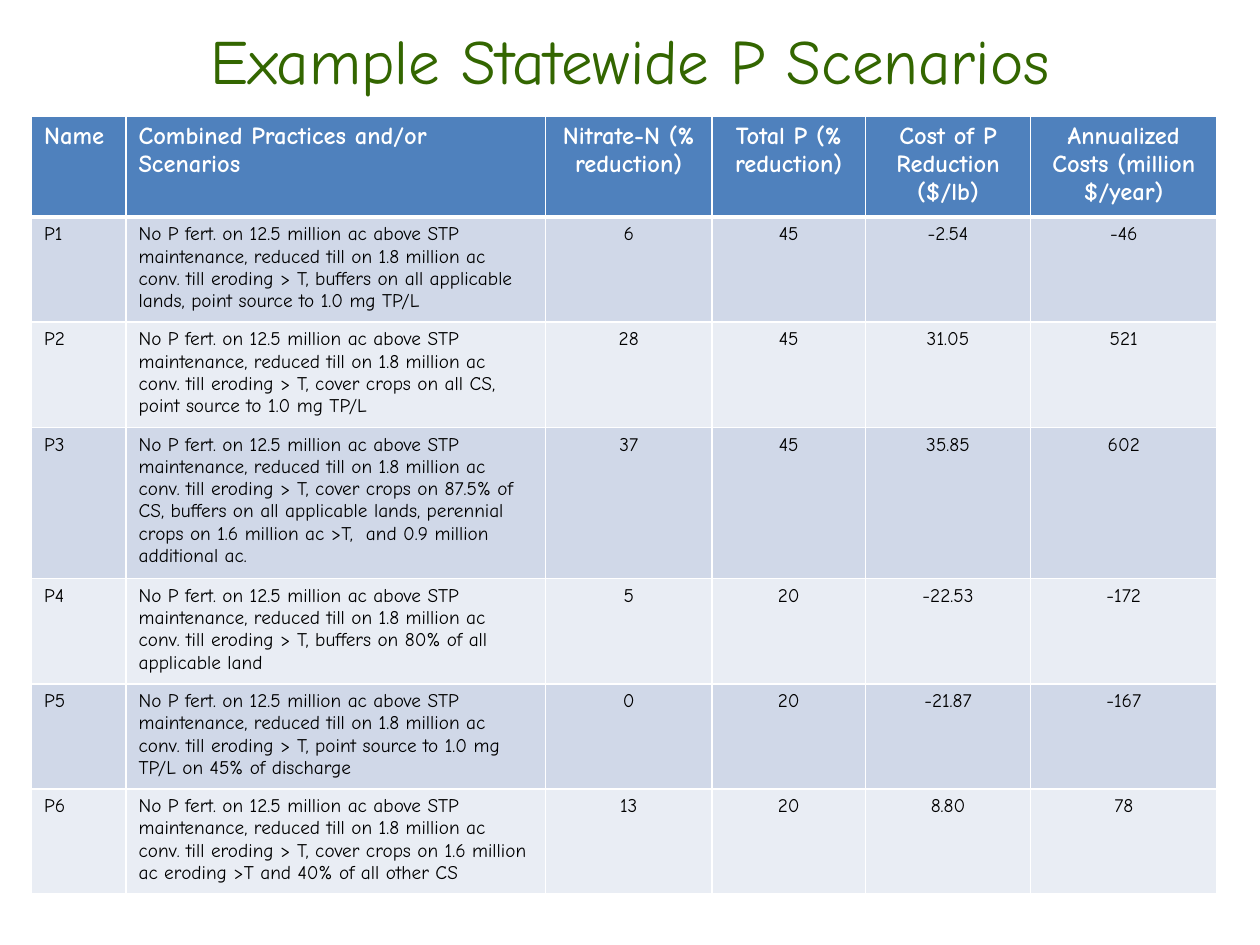
from dataclasses import dataclass

from pptx import Presentation
from pptx.dml.color import RGBColor
from pptx.enum.text import MSO_ANCHOR, PP_ALIGN
from pptx.oxml import parse_xml
from pptx.oxml.ns import nsdecls
from pptx.util import Inches, Pt


@dataclass(frozen=True)
class Theme:
    font: str = "Comic Neue"
    title: str = "336600"
    header: str = "4F81BD"
    bands: tuple = ("D0D8E8", "E9EDF4")
    light: str = "FFFFFF"
    body: str = "000000"
    title_size: int = 36
    header_size: int = 14
    body_size: int = 11
    rule: int = 1
    header_rule: int = 3


THEME = Theme()
WIDTH, HEIGHT = Inches(10), Inches(7.5)

# Boxes, columns and rows as shares of the slide's size
TITLE_BOX = (0.05, 0.01, 0.9, 0.105)
TABLE_BOX = (0.025, 0.123, 0.941, 0.87)
COLUMNS = (0.075, 0.333, 0.132, 0.122, 0.131, 0.148)
MIN_ROW = 0.055  # rows grow with their text
LEFT_COLUMNS = 2

HEADINGS = (
    "Name", "Combined Practices and/or Scenarios", "Nitrate-N (% reduction)",
    "Total P (% reduction)", "Cost of P Reduction ($/lb)",
    "Annualized Costs (million $/year)",
)
SHARED_PRACTICES = (
    "No P fert. on 12.5 million ac above STP maintenance, "
    "reduced till on 1.8 million ac conv. till eroding > T, "
)
# Practices added to the shared ones, then the four figures
SCENARIOS = (
    ("buffers on all applicable lands, point source to 1.0 mg TP/L",
     "6", "45", "-2.54", "-46"),
    ("cover crops on all CS, point source to 1.0 mg TP/L",
     "28", "45", "31.05", "521"),
    ("cover crops on 87.5% of CS, buffers on all applicable lands, "
     "perennial crops on 1.6 million ac >T,  and 0.9 million additional ac.",
     "37", "45", "35.85", "602"),
    ("buffers on 80% of all applicable land",
     "5", "20", "-22.53", "-172"),
    ("point source to 1.0 mg TP/L on 45% of discharge",
     "0", "20", "-21.87", "-167"),
    ("cover crops on 1.6 million ac eroding >T and 40% of all other CS",
     "13", "20", "8.80", "78"),
)


def place(box):
    left, top, width, height = box
    return (int(left * WIDTH), int(top * HEIGHT),
            int(width * WIDTH), int(height * HEIGHT))


def write(frame, text, *, size, color, bold=False, align=PP_ALIGN.LEFT):
    frame.word_wrap = True
    paragraph = frame.paragraphs[0]
    paragraph.alignment = align
    run = paragraph.add_run()
    run.text = text
    run.font.name = THEME.font
    run.font.size = Pt(size)
    run.font.bold = bold
    run.font.color.rgb = RGBColor.from_string(color)


def style_cell(cell, fill, widths):
    """Border the cell (widths in points by side), then fill it."""
    properties = cell._tc.get_or_add_tcPr()
    for side, points in widths.items():
        properties.append(parse_xml(
            f'<a:ln{side} {nsdecls("a")} w="{Pt(points)}"><a:solidFill>'
            f'<a:srgbClr val="{THEME.light}"/></a:solidFill></a:ln{side}>'
        ))
    cell.fill.solid()
    cell.fill.fore_color.rgb = RGBColor.from_string(fill)


def add_title(slide, box):
    frame = slide.shapes.add_textbox(*place(box)).text_frame
    frame.vertical_anchor = MSO_ANCHOR.MIDDLE
    write(frame, "Example Statewide P Scenarios", size=THEME.title_size,
          color=THEME.title, align=PP_ALIGN.CENTER)


def add_scenario_table(slide, box):
    rows = [HEADINGS] + [
        (f"P{number}", SHARED_PRACTICES + practices, *figures)
        for number, (practices, *figures) in enumerate(SCENARIOS, 1)
    ]
    table = slide.shapes.add_table(
        len(rows), len(COLUMNS), *place(box)).table
    for column, share in zip(table.columns, COLUMNS):
        column.width = int(share * WIDTH)

    for r, values in enumerate(rows):
        table.rows[r].height = int(MIN_ROW * HEIGHT)
        is_header = r == 0
        fill = THEME.header if is_header else THEME.bands[(r - 1) % 2]
        widths = dict.fromkeys("LRTB", THEME.rule)
        if is_header:
            widths["B"] = THEME.header_rule
        elif r == 1:
            widths["T"] = THEME.header_rule
        for c, value in enumerate(values):
            cell = table.cell(r, c)
            style_cell(cell, fill, widths)
            write(cell.text_frame, value, bold=is_header,
                  size=THEME.header_size if is_header else THEME.body_size,
                  color=THEME.light if is_header else THEME.body,
                  align=PP_ALIGN.LEFT if c < LEFT_COLUMNS else PP_ALIGN.CENTER)


def main():
    deck = Presentation()
    deck.slide_width, deck.slide_height = WIDTH, HEIGHT
    slide = deck.slides.add_slide(deck.slide_layouts[6])
    add_title(slide, TITLE_BOX)
    add_scenario_table(slide, TABLE_BOX)
    deck.save("out.pptx")


if __name__ == "__main__":
    main()
